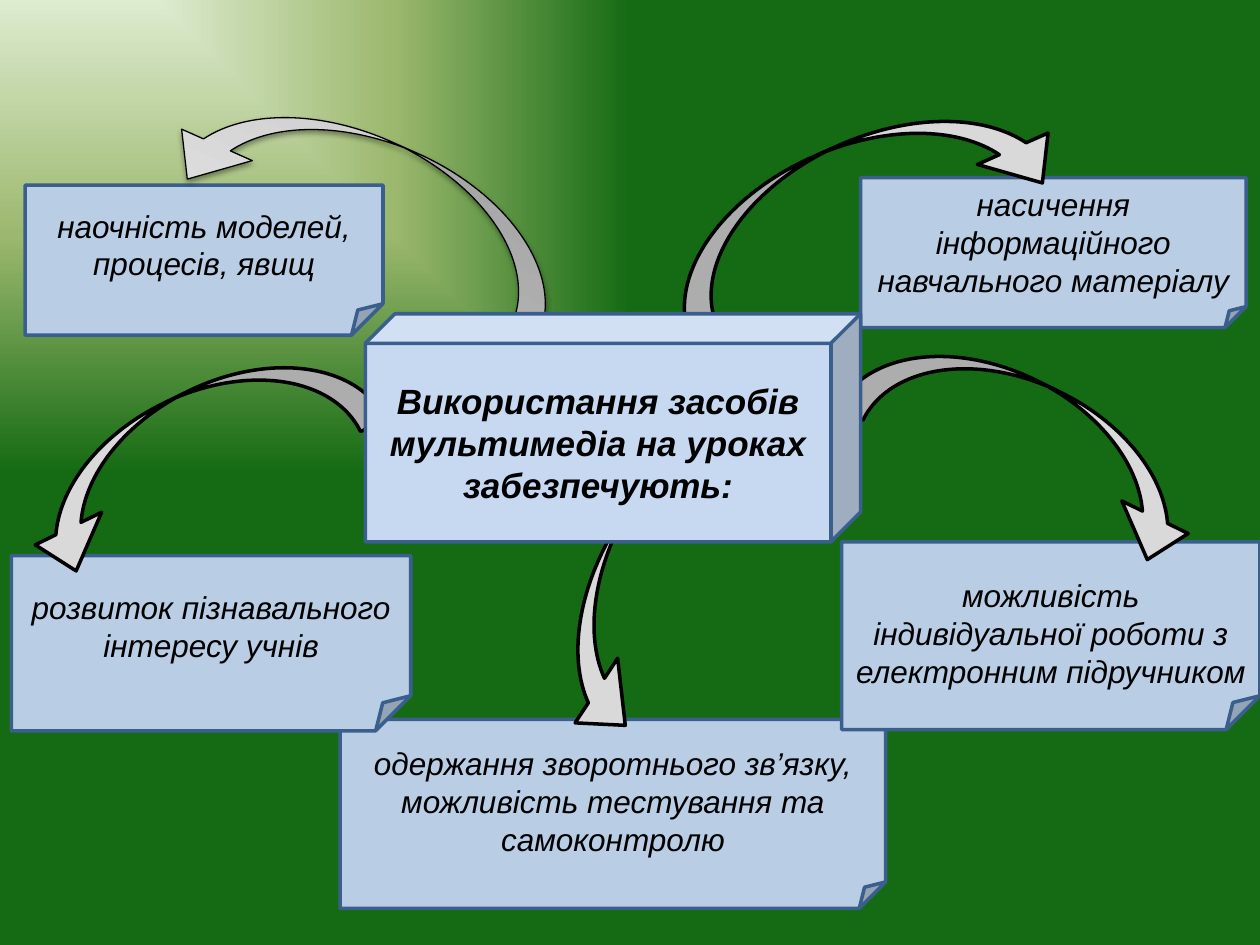
import pptx
import pptx.dml.color
import pptx.enum.shapes
import pptx.enum.text
import pptx.oxml
import pptx.oxml.ns
import pptx.util

COLORS = {
    "note": "B9CDE5",
    "cube": "C6D9F1",
    "border": "3A5F8C",
    "arrow": "D9D9D9",
    "ink": "000000",
}
BACKDROP = [(0, "DDEBCF"), (50, "9CB86E"), (100, "156B13")]
SILVER = [(0, "BDBDBD"), (35, "D1D1D1"), (100, "EEEEEE")]
COLS, ROWS = 100, 75
CELL = pptx.util.Inches(0.1)
SHAPES = pptx.enum.shapes.MSO_SHAPE
ANCHORS = pptx.enum.text.MSO_ANCHOR
NS = pptx.oxml.ns.nsdecls("a")

NOTES = [
    ("одержання зворотнього зв’язку, можливість тестування та самоконтролю",
     (27, 57.1, 43.3, 15), 0.14, ANCHORS.MIDDLE),
    ("наочність моделей, процесів, явищ",
     (2, 14.7, 28.4, 11.9), 0.21, ANCHORS.MIDDLE),
    ("насичення інформаційного навчального матеріалу",
     (68.3, 14.1, 30.6, 11.9), 0.14, ANCHORS.MIDDLE),
    ("розвиток пізнавального інтересу учнів",
     (0.9, 44.1, 31.7, 13.9), 0.2, ANCHORS.MIDDLE),
    ("можливість індивідуальної роботи з електронним підручником",
     (66.8, 43, 33.2, 14.9), 0.18, ANCHORS.BOTTOM),
]
LONG, SHORT = (33.6, 9.3), (30.3, 8.9)
ARROWS = [
    ((-0.1, 31.5), SHORT, 153.9, False),
    ((51.5, 11.2), LONG, 156, True),
    ((66.9, 30.6), SHORT, 206.1, True),
    ((36.5, 38.9), LONG, 123.4, False),
]


def rgb(value):
    return pptx.dml.color.RGBColor.from_string(value)


def set_gradient(element, fill, stops, direction):
    fill.gradient()
    grad = element.find(".//" + pptx.oxml.ns.qn("a:gradFill"))
    for child in list(grad):
        grad.remove(child)
    marks = "".join(
        f'<a:gs pos="{pos * 1000}"><a:srgbClr val="{color}"/></a:gs>'
        for pos, color in stops
    )
    grad.append(pptx.oxml.parse_xml(f"<a:gsLst {NS}>{marks}</a:gsLst>"))
    grad.append(pptx.oxml.parse_xml(direction))


def set_adjustments(sp, guides):
    geometry = sp.element.spPr.find(pptx.oxml.ns.qn("a:prstGeom"))
    for child in list(geometry):
        geometry.remove(child)
    marks = "".join(
        f'<a:gd name="{name}" fmla="val {round(value * 100000)}"/>'
        for name, value in guides.items()
    )
    geometry.append(pptx.oxml.parse_xml(f"<a:avLst {NS}>{marks}</a:avLst>"))


def add_shape(s, kind, box, guides, fill, line, width=2):
    sp = s.shapes.add_shape(kind, *(int(n * CELL) for n in box))
    set_adjustments(sp, guides)
    sp.shadow.inherit = False
    sp.fill.solid()
    sp.fill.fore_color.rgb = rgb(COLORS[fill])
    sp.line.color.rgb = rgb(COLORS[line])
    sp.line.width = pptx.util.Pt(width)
    return sp


def add_text(sp, text, size, bold=False, anchor=ANCHORS.MIDDLE):
    tf = sp.text_frame
    tf.word_wrap = True
    tf.vertical_anchor = anchor
    p = tf.paragraphs[0]
    p.alignment = pptx.enum.text.PP_ALIGN.CENTER
    r = p.add_run()
    r.text = text
    r.font.name = "Arial"
    r.font.size = pptx.util.Pt(size)
    r.font.bold = bold
    r.font.italic = True
    r.font.color.rgb = rgb(COLORS["ink"])


def add_note(s, text, box, fold, anchor):
    sp = add_shape(s, SHAPES.FOLDED_CORNER, box, {"adj": fold},
                   "note", "border")
    add_text(sp, text, 18, anchor=anchor)


def add_arrow(s, corner, size, angle, flipped, width=2):
    guides = {"adj1": 0.25, "adj2": 0.66, "adj3": 0.37}
    sp = add_shape(s, SHAPES.CURVED_UP_ARROW, corner + size, guides,
                   "arrow", "ink", width)
    sp.rotation = angle
    if flipped:
        sp.element.spPr.find(pptx.oxml.ns.qn("a:xfrm")).set("flipH", "1")
    return sp


def add_silver_arrow(s):
    sp = add_arrow(s, (12.5, 10.9), LONG, 204, False, 0.75)
    set_gradient(sp.element, sp.fill, SILVER,
                 f'<a:lin {NS} ang="16200000" scaled="1"/>')
    effects = sp.element.spPr.find(pptx.oxml.ns.qn("a:effectLst"))
    blur, dist = pptx.util.Pt(3.1), pptx.util.Pt(1.6)
    effects.append(pptx.oxml.parse_xml(
        f'<a:outerShdw {NS} blurRad="{blur}" dist="{dist}" dir="5400000" '
        f'rotWithShape="0"><a:srgbClr val="{COLORS["ink"]}">'
        '<a:alpha val="38000"/></a:srgbClr></a:outerShdw>'))


def add_cube(s):
    sp = add_shape(s, SHAPES.CUBE, (29, 24.9, 39.3, 18.1), {"adj": 0.13},
                   "cube", "border")
    add_text(sp, "Використання засобів мультимедіа на уроках забезпечують:",
             20, bold=True)


def main():
    prs = pptx.Presentation()
    prs.slide_width, prs.slide_height = COLS * CELL, ROWS * CELL
    s = prs.slides.add_slide(prs.slide_layouts[6])
    set_gradient(s.element, s.background.fill, BACKDROP,
                 f'<a:path {NS} path="rect">'
                 '<a:fillToRect r="100000" b="100000"/></a:path>')
    for note in NOTES:
        add_note(s, *note)
    add_silver_arrow(s)
    for arrow in ARROWS:
        add_arrow(s, *arrow)
    add_cube(s)
    prs.save("out.pptx")


if __name__ == "__main__":
    main()
